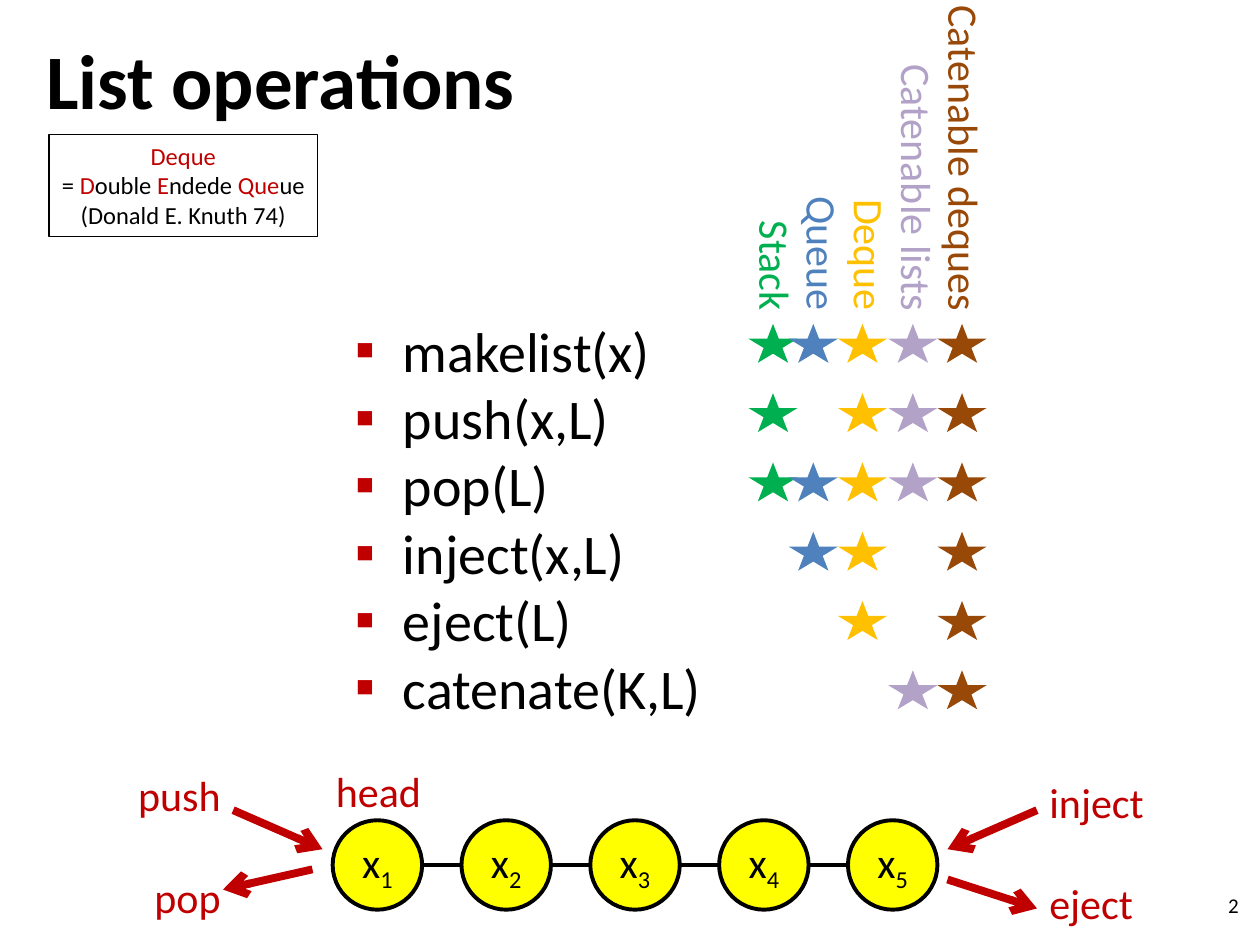
from collections import namedtuple
from dataclasses import dataclass

from lxml.etree import SubElement
from pptx import Presentation
from pptx.dml.color import RGBColor
from pptx.enum.shapes import MSO_CONNECTOR, MSO_SHAPE
from pptx.enum.text import MSO_ANCHOR, PP_ALIGN
from pptx.oxml.ns import qn
from pptx.util import Inches, Pt

Box = namedtuple("Box", "left top width height")
Kind = namedtuple("Kind", "name color star_left operations")


@dataclass(frozen=True)
class Theme:
    font: str = "Calibri"
    ink: str = "000000"
    accent: str = "C00000"
    node: str = "FFFF00"
    title: int = 44
    body: int = 32
    label: int = 24
    note: int = 14
    number: int = 12


THEME = Theme()
OPERATIONS = ["makelist(x)", "push(x,L)", "pop(L)", "inject(x,L)", "eject(L)", "catenate(K,L)"]
KINDS = [
    Kind("Stack", "00B050", 0, (0, 1, 2)),
    Kind("Queue", "4F81BD", 0.32, (0, 2, 3)),
    Kind("Deque", "FFC000", 0.71, (0, 1, 2, 3, 4)),
    Kind("Catenable lists", "B3A2C7", 1.11, (0, 1, 2, 5)),
    Kind("Catenable deques", "984807", 1.5, range(6)),
]


def inches(box):
    return [Inches(length) for length in box]


def set_values(target, values):
    for name, value in values.items():
        setattr(target, name, value)


def add_span(para, text, size, color=THEME.ink, **values):
    span = para.add_run()
    span.text = text
    set_values(span.font, {"name": THEME.font, "size": Pt(size), **values})
    span.font.color.rgb = RGBColor.from_string(color)
    return span


def add_text_box(page, box, lines, size, frame_values=None, para_values=None, **span_values):
    """Place one paragraph for each (text, color) pair and return the shape."""
    shape = page.shapes.add_textbox(*inches(box))
    frame = shape.text_frame
    set_values(frame, {"word_wrap": True, **(frame_values or {})})
    for index, (text, color) in enumerate(lines):
        para = frame.add_paragraph() if index else frame.paragraphs[0]
        set_values(para, para_values or {})
        add_span(para, text, size, color, **span_values)
    return shape


def add_shape(page, preset, box, fill=None, line_width=None):
    shape = page.shapes.add_shape(preset, *inches(box))
    shape.shadow.inherit = False
    if fill:
        shape.fill.solid()
        shape.fill.fore_color.rgb = RGBColor.from_string(fill)
    else:
        shape.fill.background()
    if line_width:
        shape.line.color.rgb = RGBColor.from_string(THEME.ink)
        shape.line.width = Pt(line_width)
    else:
        shape.line.fill.background()
    return shape


def add_line(page, start, end, color, width, arrow=False):
    line = page.shapes.add_connector(MSO_CONNECTOR.STRAIGHT, *inches(start + end))
    line.line.color.rgb = RGBColor.from_string(color)
    line.line.width = Pt(width)
    if arrow:
        SubElement(line.line._get_or_add_ln(), qn("a:tailEnd"), type="arrow")
    SubElement(line._element.spPr, qn("a:effectLst"))


def add_operations(page, box):
    lines = [(operation, THEME.ink) for operation in OPERATIONS]
    shape = add_text_box(page, box, lines, THEME.body, para_values={"line_spacing": Pt(38.5)})
    for para in shape.text_frame.paragraphs:
        properties = para._p.get_or_add_pPr()
        properties.set("marL", str(Inches(0.38)))
        properties.set("indent", str(-Inches(0.38)))
        bullet_color = SubElement(properties, qn("a:buClr"))
        SubElement(bullet_color, qn("a:srgbClr"), val=THEME.accent)
        SubElement(properties, qn("a:buFont"), typeface=THEME.font)
        SubElement(properties, qn("a:buChar"), char="▪")


def add_star_grid(page, box):
    """Mark the operations of each kind of list, one column for each kind."""
    star_width, star_height = 0.39, 0.31
    row_step = (box.height - star_height) / (len(OPERATIONS) - 1)
    for kind in KINDS:
        for row in kind.operations:
            star = Box(box.left + kind.star_left, box.top + row * row_step, star_width, star_height)
            add_shape(page, MSO_SHAPE.STAR_5_POINT, star, kind.color)


def add_kind_names(page, box):
    lines = [(kind.name, kind.color) for kind in reversed(KINDS)]
    values = {"alignment": PP_ALIGN.RIGHT, "line_spacing": Pt(27)}
    add_text_box(page, box, lines, THEME.label, para_values=values).rotation = 90


def add_chain(page, box, count=5):
    """Draw the linked nodes x1 to x5 across the box."""
    size = box.height
    step = (box.width - size) / (count - 1)
    middle = box.top + size / 2
    for index in range(count):
        left = box.left + index * step
        node = add_shape(page, MSO_SHAPE.OVAL, Box(left, box.top, size, size), THEME.node, 2.25)
        frame = node.text_frame
        set_values(frame, {"margin_left": 0, "margin_right": 0,
                           "vertical_anchor": MSO_ANCHOR.MIDDLE})
        para = frame.paragraphs[0]
        para.alignment = PP_ALIGN.CENTER
        add_span(para, "x", THEME.label)
        subscript = add_span(para, str(index + 1), THEME.label)
        subscript.font._element.set("baseline", "-25000")
        if index:
            add_line(page, (left - step + size, middle), (left, middle), THEME.ink, 2.25)


def add_chain_end(page, box, labels, alignment, arrows):
    """Label one end of the chain; arrows are start and end offsets in the box."""
    for start, end in arrows:
        points = [(box.left + x, box.top + y) for x, y in (start, end)]
        add_line(page, *points, THEME.accent, 4.5, arrow=True)
    lines = [(label, THEME.accent) for label in labels]
    shape = add_text_box(page, box, lines, THEME.label, para_values={"alignment": alignment})
    shape.text_frame.paragraphs[-1].space_before = Pt(29.3)


def add_deque_note(page, box):
    frame = add_shape(page, MSO_SHAPE.RECTANGLE, box, line_width=0.75).text_frame
    set_values(frame, {"word_wrap": True, "vertical_anchor": MSO_ANCHOR.TOP})
    para = frame.paragraphs[0]
    para.alignment = PP_ALIGN.CENTER
    add_span(para, "Deque", THEME.note, THEME.accent)
    para.add_line_break()
    pieces = ["= ", "D", "ouble ", "E", "ndede ", "Que", "ue (Donald E. Knuth 74)"]
    for index, piece in enumerate(pieces):
        add_span(para, piece, THEME.note, THEME.accent if index % 2 else THEME.ink)


def main():
    deck = Presentation()
    deck.slide_width, deck.slide_height = Inches(10), Inches(7.5)
    page = deck.slides.add_slide(deck.slide_layouts[6])
    middle = {"vertical_anchor": MSO_ANCHOR.MIDDLE}
    right = {"alignment": PP_ALIGN.RIGHT}

    add_text_box(page, Box(0.27, 0, 4.57, 1.25), [("List operations", THEME.ink)],
                 THEME.title, middle, bold=True)
    add_operations(page, Box(2.72, 2.46, 3.24, 3.97))
    add_text_box(page, Box(7.6, 6.98, 2.33, 0.4), [("2", THEME.ink)], THEME.number, middle, right)
    add_star_grid(page, Box(5.94, 2.57, 1.89, 3.06))
    add_kind_names(page, Box(5.52, 0.2, 2.74, 1.99))
    add_chain(page, Box(2.64, 6.51, 4.8, 0.71))
    add_chain_end(page, Box(0.28, 6.06, 1.57, 1.31), ("push", "pop"), PP_ALIGN.RIGHT,
                  [((1.57, 0.37), (2.28, 0.68)), ((2.2, 0.84), (1.49, 1))])
    add_chain_end(page, Box(8.23, 6.11, 1.57, 1.31), ("inject", "eject"), PP_ALIGN.LEFT,
                  [((0, 0.32), (-0.71, 0.63)), ((-0.71, 0.87), (0, 1.1))])
    add_text_box(page, Box(1.87, 6.03, 1.57, 0.5), [("head", THEME.accent)],
                 THEME.label, para_values=right)
    add_deque_note(page, Box(0.39, 1.07, 2.13, 0.81))
    deck.save("out.pptx")


if __name__ == "__main__":
    main()
